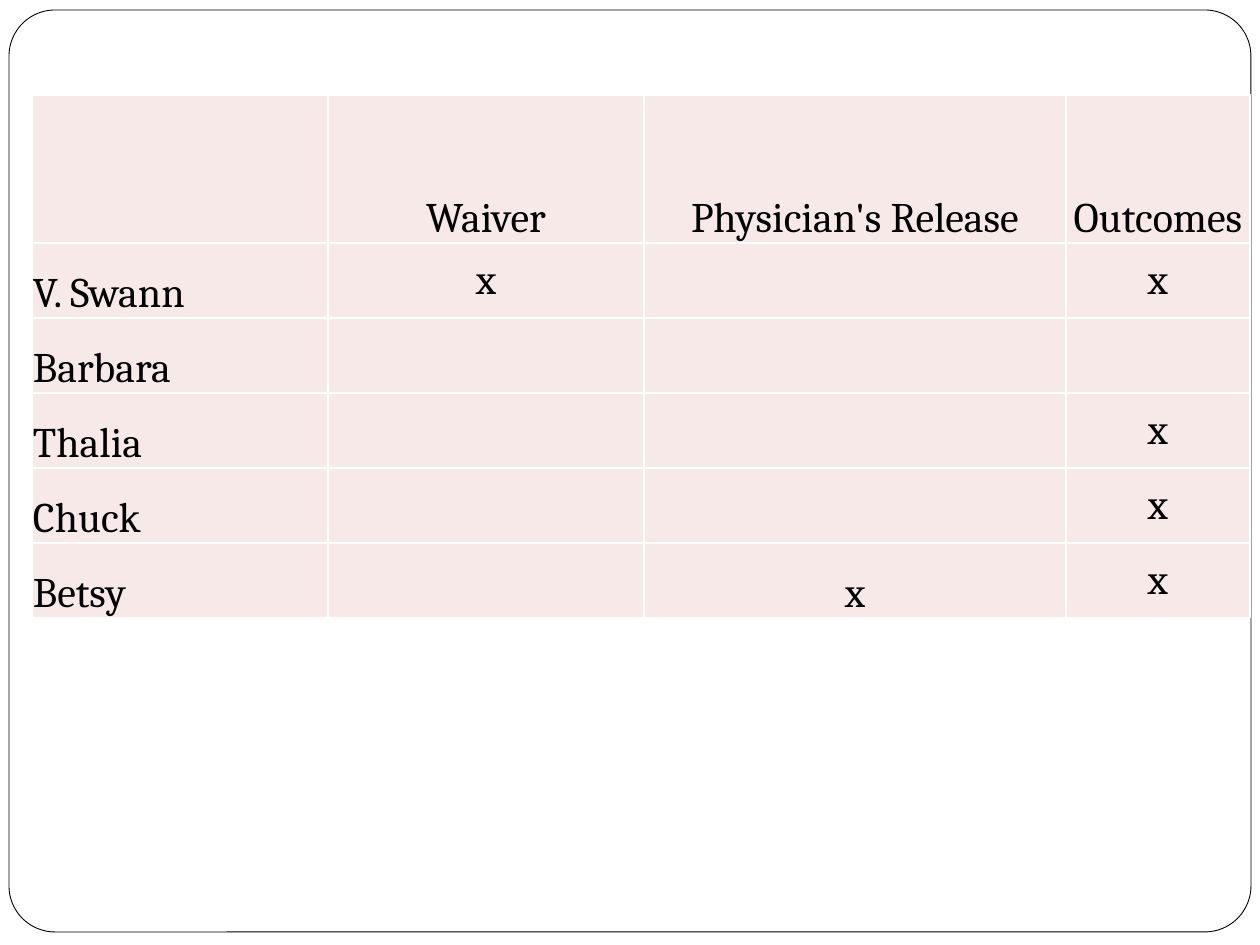
"""Build a slide with a table of who has turned in which form."""
from lxml import etree
from pptx import Presentation
from pptx.dml.color import RGBColor
from pptx.enum.shapes import MSO_SHAPE
from pptx.enum.text import MSO_ANCHOR as Anchor, PP_ALIGN as Align
from pptx.oxml.ns import qn
from pptx.util import Pt

PX = 914400 / 126
BLACK = RGBColor(0, 0, 0)
WHITE = RGBColor(255, 255, 255)
PINK = RGBColor(0xF7, 0xE9, 0xE8)

COLUMN_WIDTHS = [296, 316, 422, 184]
ROW_HEIGHTS = [148] + [75] * 5
ROWS = [
    ["", "Waiver", "Physician's Release", "Outcomes"],
    ["V. Swann", "x", "", "x"],
    ["Barbara", "", "", ""],
    ["Thalia", "", "", "x"],
    ["Chuck", "", "", "x"],
    ["Betsy", "", "x", "x"],
]


def px(length):
    return round(length * PX)


def add_borders(cell):
    properties = cell._tc.get_or_add_tcPr()
    for position, side in enumerate(["lnL", "lnR", "lnT", "lnB"]):
        line = etree.Element(qn(f"a:{side}"), w=str(Pt(1)))
        fill = etree.SubElement(line, qn("a:solidFill"))
        etree.SubElement(fill, qn("a:srgbClr"), val=str(WHITE))
        properties.insert(position, line)


deck = Presentation()
deck.slide_width, deck.slide_height = px(1260), px(945)
page = deck.slides.add_slide(deck.slide_layouts[6])

frame = page.shapes.add_shape(
    MSO_SHAPE.ROUNDED_RECTANGLE, px(9), px(10), px(1242), px(922))
frame.adjustments[0] = 0.05
frame.shadow.inherit = False
frame.fill.solid()
frame.fill.fore_color.rgb = WHITE
frame.line.color.rgb = BLACK
frame.line.width = Pt(0.5)

table = page.shapes.add_table(
    len(ROWS), len(COLUMN_WIDTHS), px(32), px(95),
    px(sum(COLUMN_WIDTHS)), px(sum(ROW_HEIGHTS))).table
for column, width in zip(table.columns, COLUMN_WIDTHS):
    column.width = px(width)
for row, height in zip(table.rows, ROW_HEIGHTS):
    row.height = px(height)

for row_index, texts in enumerate(ROWS):
    for column_index, text in enumerate(texts):
        cell = table.cell(row_index, column_index)
        cell.fill.solid()
        cell.fill.fore_color.rgb = PINK
        add_borders(cell)
        if not text:
            continue
        cell.margin_left = cell.margin_right = cell.margin_top = px(1)
        cell.margin_bottom = 0
        centred_mark = text == "x" and column_index != 2
        cell.vertical_anchor = Anchor.MIDDLE if centred_mark else Anchor.BOTTOM
        cell.text_frame.text = text
        para = cell.text_frame.paragraphs[0]
        para.alignment = Align.CENTER if column_index else Align.LEFT
        font = para.runs[0].font
        font.name = "Cambria"
        font.size = Pt(24)
        font.bold = False
        font.color.rgb = BLACK

deck.save("out.pptx")
